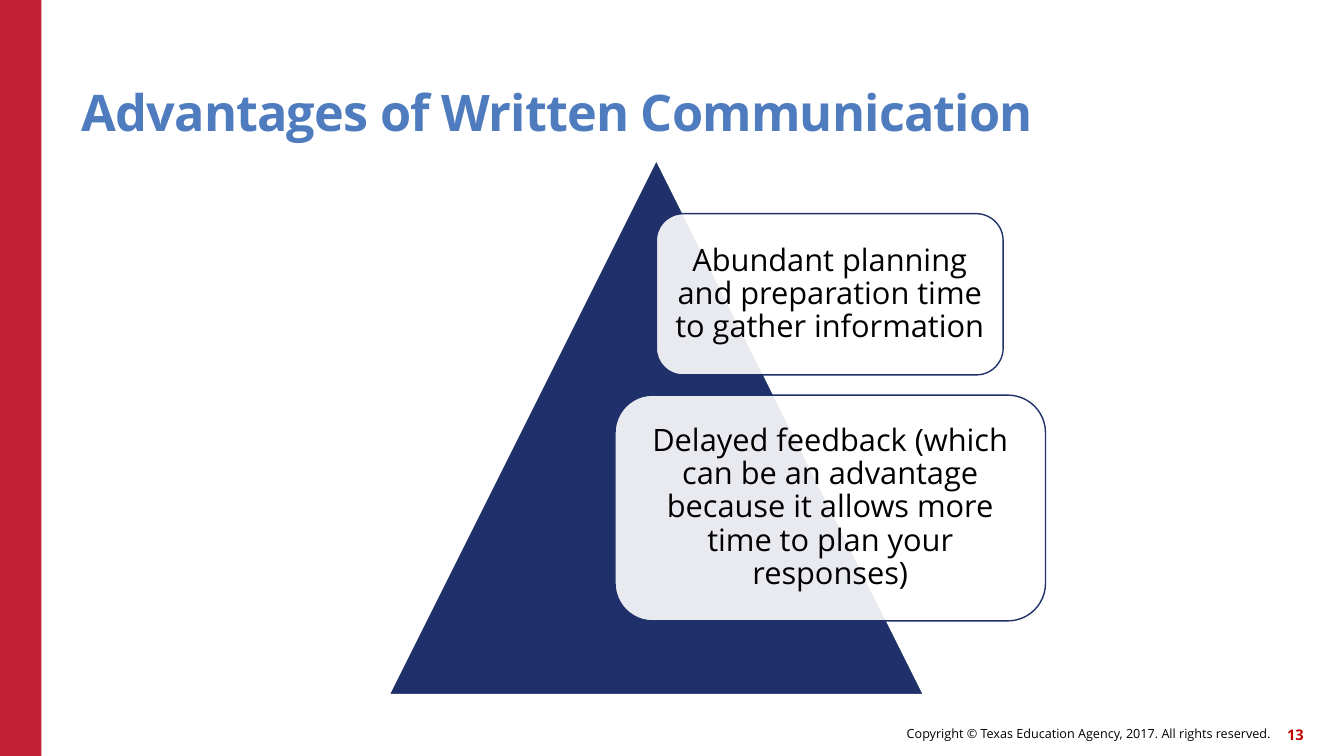
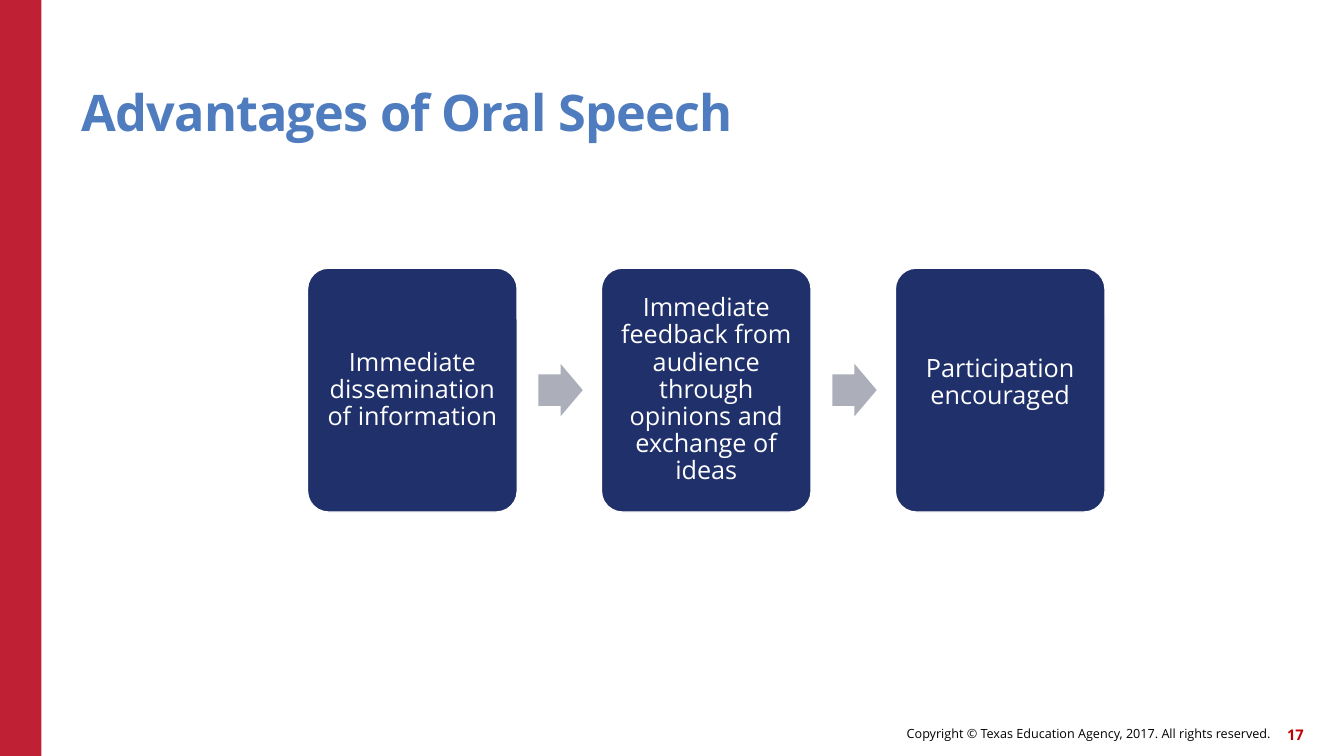
from lxml import etree
from pptx import Presentation
from pptx import util as u
from pptx.dml.color import RGBColor
from pptx.enum import shapes, text
from pptx.oxml import ns

FONT = "Open Sans"
COLORS = {
    "band": "C02033",
    "title": "4E7CBE",
    "navy": "20306A",
    "arrow": "ACAEB9",
    "number": "C00000",
    "white": "FFFFFF",
    "black": "000000",
}
COPYRIGHT = "Copyright © Texas Education Agency, 2017. All rights reserved."
SHAPE = shapes.MSO_SHAPE
ALIGN = text.PP_ALIGN


def rgb(name):
    return RGBColor.from_string(COLORS[name])


def write(shape, words, size, color, align, bold=False, margin=0, spacing=1.0,
          anchor=text.MSO_ANCHOR.MIDDLE):
    frame = shape.text_frame
    frame.text = words
    frame.word_wrap = True
    frame.vertical_anchor = anchor
    frame.margin_left = frame.margin_right = u.Inches(margin)
    frame.margin_top = frame.margin_bottom = u.Inches(margin)
    para = frame.paragraphs[0]
    para.alignment = align
    para.line_spacing = spacing
    span = para.runs[0]
    span.font.name = FONT
    span.font.size = u.Pt(size)
    span.font.bold = bold
    span.font.color.rgb = rgb(color)
    return span


def add_label(page, area, words, size, color, align, **style):
    box = page.shapes.add_textbox(*map(u.Inches, area))
    return write(box, words, size, color, align, **style)


def add_figure(page, kind, area, fill, line=None, adjustments=()):
    shape = page.shapes.add_shape(kind, *map(u.Inches, area))
    shape.shadow.inherit = False
    shape.fill.solid()
    shape.fill.fore_color.rgb = rgb(fill)
    if line:
        shape.line.color.rgb = rgb(line)
        shape.line.width = u.Pt(1)
    else:
        shape.line.fill.background()
    for index, value in enumerate(adjustments):
        shape.adjustments[index] = value
    return shape


def set_opacity(shape, percent):
    color = shape.fill._xPr.find(".//" + ns.qn("a:srgbClr"))
    etree.SubElement(color, ns.qn("a:alpha")).set("val", str(percent * 1000))


def add_page(deck, title, number):
    page = deck.slides.add_slide(deck.slide_layouts[6])
    add_figure(page, SHAPE.RECTANGLE, (0, 0, 0.41, 7.5), "band")
    add_label(page, (6.14, 7.12, 6.46, 0.32), COPYRIGHT, 9, "black", ALIGN.RIGHT)
    add_label(page, (12.51, 7.13, 0.42, 0.32), str(number), 10.5, "number",
              ALIGN.RIGHT, bold=True)
    span = add_label(page, (0.81, 0.45, 11, 0.96), title, 36, "title", ALIGN.LEFT,
                     bold=True, spacing=0.9, anchor=text.MSO_ANCHOR.BOTTOM)
    span.font._element.set("spc", "-60")
    return page


def add_pyramid(page, cards):
    add_figure(page, SHAPE.ISOSCELES_TRIANGLE, (3.86, 1.59, 5.3, 5.3), "navy", "white")
    for area, words in cards:
        card = add_figure(page, SHAPE.ROUNDED_RECTANGLE, area, "white", "navy")
        set_opacity(card, 90)
        write(card, words, 22, "black", ALIGN.CENTER, margin=0.09, spacing=0.9)


def add_process(page, steps):
    left, top, width, height = 3.05, 2.66, 2.08, 2.42
    arrow_width, arrow_height = 0.44, 0.52
    pitch = (8.88 - left) / 2
    for index, (words, lift) in enumerate(steps):
        x = left + index * pitch
        if index:
            arrow_left = x - pitch + width + 0.21
            arrow_top = top + (height - arrow_height) / 2
            add_figure(page, SHAPE.RIGHT_ARROW,
                       (arrow_left, arrow_top, arrow_width, arrow_height),
                       "arrow", adjustments=(0.6, 0.5))
        step = add_figure(page, SHAPE.ROUNDED_RECTANGLE, (x, top, width, height),
                          "navy", "white", (0.1,))
        write(step, words, 18, "white", ALIGN.CENTER, margin=0.07, spacing=0.9)
        step.text_frame.margin_bottom += u.Inches(2 * lift)


def main():
    deck = Presentation()
    deck.slide_width, deck.slide_height = u.Inches(13.33), u.Inches(7.5)

    written = add_page(deck, "Advantages of Written Communication", 13)
    add_pyramid(written, [
        ((6.51, 2.12, 3.44, 1.6),
         "Abundant planning and preparation time to gather information"),
        ((6.1, 3.92, 4.27, 2.24),
         "Delayed feedback (which can be an advantage because it allows more "
         "time to plan your responses)"),
    ])

    oral = add_page(deck, "Advantages of Oral Speech", 17)
    add_process(oral, [
        ("Immediate dissemination of information", 0),
        ("Immediate feedback from audience through opinions and exchange of ideas", 0),
        ("Participation encouraged", 0.07),
    ])

    deck.save("out.pptx")


if __name__ == "__main__":
    main()
